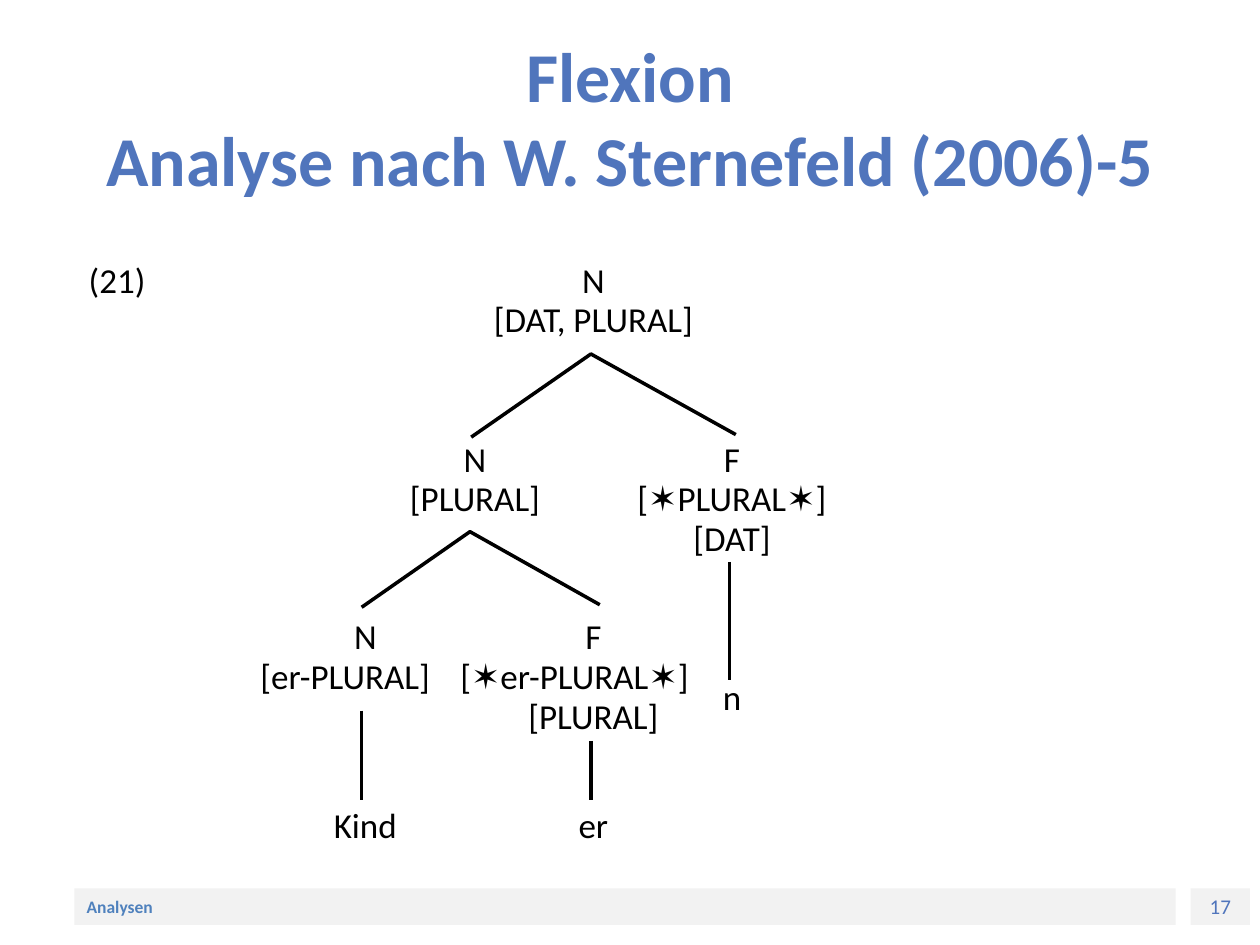
from pptx import Presentation
from pptx.dml.color import RGBColor
from pptx.enum.shapes import MSO_CONNECTOR, MSO_SHAPE
from pptx.enum.text import MSO_ANCHOR, PP_ALIGN
from pptx.util import Inches, Pt
from lxml import etree

A_NS = "http://schemas.openxmlformats.org/drawingml/2006/main"
FONT = "Calibri"
BLACK = RGBColor(0x00, 0x00, 0x00)
BLUE = RGBColor(0x50, 0x75, 0xBC)
FOOTER_BLUE = RGBColor(0x4F, 0x81, 0xBD)
LIGHT_GRAY = RGBColor(0xF2, 0xF2, 0xF2)

LABEL_W, LABEL_H = 2.1, 0.55
LINE_PITCH = 0.315
LINE_WIDTH = Pt(2)

# Tree nodes: centre x, top of the first line, lines of (text, shift in x)
NODES = [
    (4.71, 1.94, [("N", 0), ("[DAT, PLURAL]", 0)]),
    (3.77, 3.36, [("N", 0), ("[PLURAL]", 0)]),
    (5.81, 3.36, [("F", 0), ("[✶PLURAL✶]", 0), ("[DAT]", 0)]),
    (2.9, 4.77, [("N", 0), ("[er-PLURAL]", -0.16)]),
    (4.71, 4.77, [("F", 0), ("[✶er-PLURAL✶]", -0.15), ("[PLURAL]", 0)]),
    (5.81, 5.25, [("n", 0)]),
    (2.9, 6.27, [("Kind", 0)]),
    (4.71, 6.27, [("er", 0)]),
]
# Branches: left end, apex, right end
BRANCHES = [
    [(3.74, 3.47), (4.69, 2.81), (5.84, 3.45)],
    [(2.87, 4.82), (3.73, 4.22), (4.76, 4.8)],
]
# Stems: x, top, bottom
STEMS = [(2.87, 5.64, 6.35), (5.79, 4.46, 5.4), (4.69, 5.88, 6.35)]


def write(sp, text, size, color, bold=False, align=PP_ALIGN.CENTER):
    tf = sp.text_frame
    tf.word_wrap = True
    tf.vertical_anchor = MSO_ANCHOR.MIDDLE
    p = tf.paragraphs[0]
    p.text = text
    p.alignment = align
    p.font.name = FONT
    p.font.size = Pt(size)
    p.font.bold = bold
    p.font.color.rgb = color


def add_text(s, box, text, size, color, **style):
    sp = s.shapes.add_textbox(*map(Inches, box))
    write(sp, text, size, color, **style)


def add_bar(s, box, text, size, color, **style):
    sp = s.shapes.add_shape(MSO_SHAPE.RECTANGLE, *map(Inches, box))
    sp.shadow.inherit = False
    sp.fill.solid()
    sp.fill.fore_color.rgb = LIGHT_GRAY
    sp.line.fill.background()
    write(sp, text, size, color, **style)


def add_label(s, center_x, top, text, width=LABEL_W):
    add_text(s, (center_x - width / 2, top, width, LABEL_H), text, 20, BLACK)


def add_branch(s, points):
    """Draw the open two-legged line from a node to its two children."""
    start, *rest = [(Inches(x), Inches(y)) for x, y in points]
    fb = s.shapes.build_freeform(*start)
    fb.add_line_segments(rest, close=False)
    sp = fb.convert_to_shape()
    sp.shadow.inherit = False
    sp.fill.background()
    sp.line.color.rgb = BLACK
    sp.line.width = LINE_WIDTH


def add_stem(s, x, top, bottom):
    """Draw the vertical line from a node down to its word form."""
    line = s.shapes.add_connector(
        MSO_CONNECTOR.STRAIGHT, Inches(x), Inches(top), Inches(x), Inches(bottom))
    line.line.color.rgb = BLACK
    line.line.width = LINE_WIDTH
    etree.SubElement(line._element.spPr, f"{{{A_NS}}}effectLst")


def add_tree(s):
    for x, top, lines in NODES:
        for i, (text, shift) in enumerate(lines):
            add_label(s, x + shift, top + i * LINE_PITCH, text)
    for points in BRANCHES:
        add_branch(s, points)
    for stem in STEMS:
        add_stem(s, *stem)


def add_footer(s):
    add_bar(s, (0.59, 7.05, 8.74, 0.29), "Analysen", 10, FOOTER_BLUE,
            bold=True, align=PP_ALIGN.LEFT)
    add_bar(s, (9.45, 7.05, 0.47, 0.29), "17", 12, BLUE)


def main():
    prs = Presentation()
    prs.slide_width, prs.slide_height = Inches(10), Inches(7.5)
    s = prs.slides.add_slide(prs.slide_layouts[6])
    add_footer(s)
    add_text(s, (0.5, 0.3, 9, 1.25), "Flexion\vAnalyse nach W. Sternefeld (2006)-5",
             40, BLUE, bold=True)
    add_label(s, 0.93, 1.94, "(21)", width=1)
    add_tree(s)
    prs.save("out.pptx")


if __name__ == "__main__":
    main()
